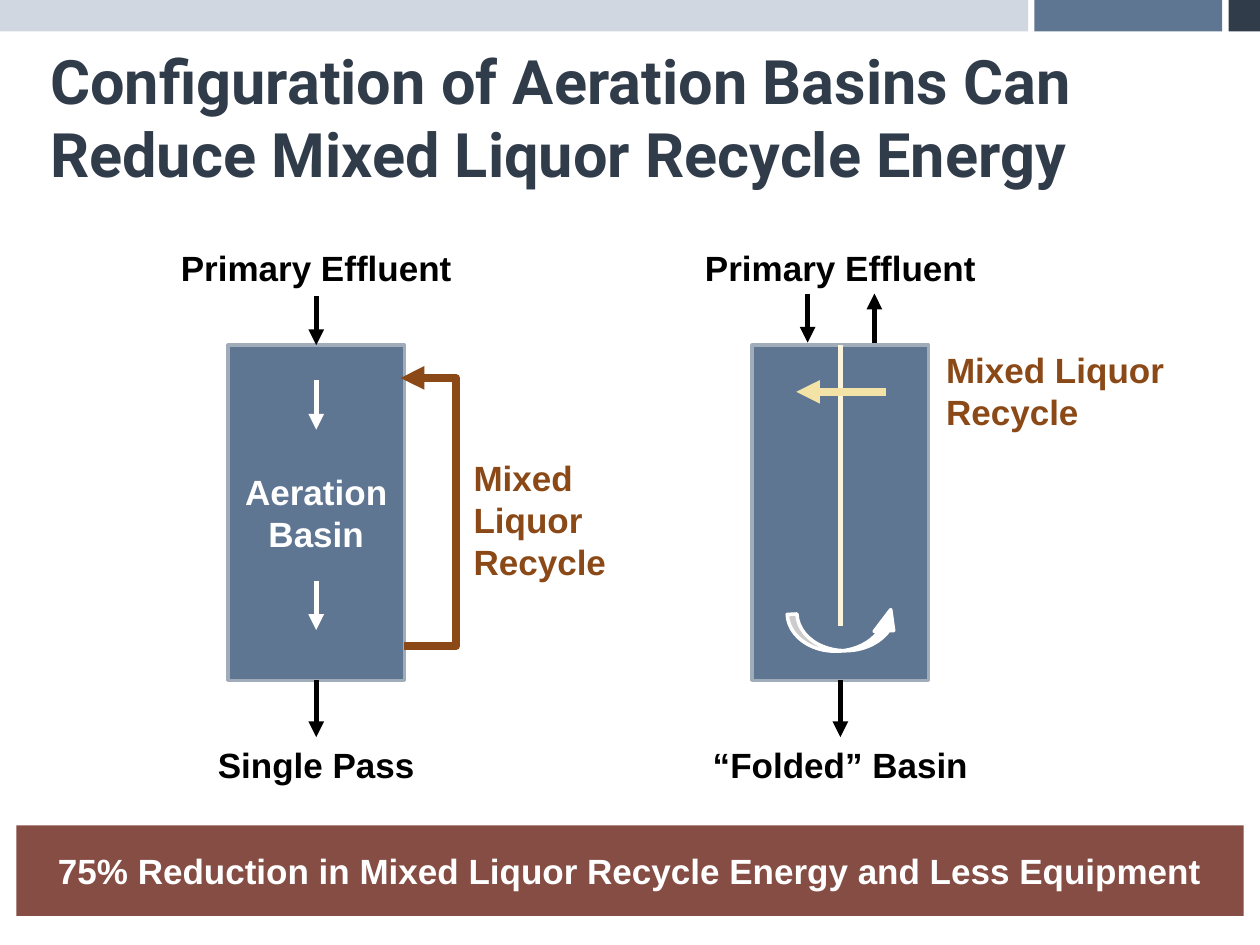
from lxml import etree
from pptx import Presentation
from pptx.dml.color import RGBColor
from pptx.enum.shapes import MSO_CONNECTOR, MSO_SHAPE
from pptx.enum.text import MSO_ANCHOR, MSO_AUTO_SIZE, PP_ALIGN
from pptx.oxml.ns import qn
from pptx.util import Inches, Pt

RECT = MSO_SHAPE.RECTANGLE
CURVE = MSO_SHAPE.CURVED_RIGHT_ARROW
LINE = MSO_CONNECTOR.STRAIGHT
LEFT, CENTER = PP_ALIGN.LEFT, PP_ALIGN.CENTER
TOP, MIDDLE = MSO_ANCHOR.TOP, MSO_ANCHOR.MIDDLE
GROW = MSO_AUTO_SIZE.SHAPE_TO_FIT_TEXT
BLACK, WHITE = "000000", "FFFFFF"
BLUE, NAVY, PALE, EDGE = "5F7693", "313C4A", "D0D7E0", "A0ACBA"
BROWN, BRICK, CREAM, GOLD = "8A4917", "864D44", "FAF4DB", "F3E3A6"


def color(code):
    return RGBColor.from_string(code)


class Board:
    """Draws styled elements on the current slide."""

    def __init__(self, slide, font="Arial", size=20):
        self.slide, self.font, self.size = slide, font, size

    def text(self, shape, words, ink, align=CENTER, anchor=MIDDLE, font=None, size=None):
        frame = shape.text_frame
        frame.word_wrap = True
        frame.vertical_anchor = anchor
        para = frame.paragraphs[0]
        para.alignment = align
        run = para.add_run()
        run.text = words
        run.font.name = font or self.font
        run.font.size = Pt(size or self.size)
        run.font.bold = True
        run.font.color.rgb = color(ink)

    def stroke(self, line, ink, width):
        line.color.rgb = color(ink)
        line.width = Pt(width)

    def arrow(self, shape):
        edge = shape._element.spPr.find(qn("a:ln"))
        etree.SubElement(edge, qn("a:tailEnd"), type="triangle")

    def label(self, box, words, ink=BLACK, align=CENTER):
        shape = self.slide.shapes.add_textbox(*map(Inches, box))
        self.text(shape, words, ink, align, TOP)
        shape.text_frame.auto_size = GROW

    def title(self, box, words):
        shape = self.slide.shapes.add_textbox(*map(Inches, box))
        self.text(shape, words, NAVY, LEFT, font="Roboto", size=35)

    def shape(self, box, fill, edge=None, kind=RECT):
        shape = self.slide.shapes.add_shape(kind, *map(Inches, box))
        shape.shadow.inherit = False
        shape.fill.solid()
        shape.fill.fore_color.rgb = color(fill)
        if edge:
            self.stroke(shape.line, edge, 2)
        else:
            shape.line.fill.background()
        return shape

    def line(self, start, end, ink=BLACK, width=3, arrow=True, first=None, last=None):
        link = self.slide.shapes.add_connector(LINE, *map(Inches, start + end))
        if first:
            link.begin_connect(*first)
        if last:
            link.end_connect(*last)
        self.stroke(link.line, ink, width)
        if arrow:
            self.arrow(link)
        etree.SubElement(link._element.spPr, qn("a:effectLst"))

    def route(self, points, ink, width):
        points = [(Inches(x), Inches(y)) for x, y in points]
        maker = self.slide.shapes.build_freeform(*points[0], scale=1.0)
        maker.add_line_segments(points[1:], close=False)
        shape = maker.convert_to_shape()
        shape.shadow.inherit = False
        shape.fill.background()
        self.stroke(shape.line, ink, width)
        self.arrow(shape)

    def basin(self, mid, name):
        self.label((mid - 1.47, 1.91, 2.94, 0.44), "Primary Effluent")
        self.label((mid - 1.47, 5.85, 2.94, 0.44), name)
        tank = self.shape((mid - 0.7, 2.74, 1.4, 2.66), BLUE, EDGE)
        self.line((mid, 5.4), (mid, 5.85), first=(tank, 2))
        return tank


def main():
    deck = Presentation()
    deck.slide_width, deck.slide_height = Inches(10), Inches(7.5)
    board = Board(deck.slides.add_slide(deck.slide_layouts[6]))

    for left, width, fill in ((0, 8.16, PALE), (8.21, 1.49, BLUE), (9.75, 0.25, NAVY)):
        board.shape((left, 0, width, 0.25), fill)
    board.title((0.3, 0.3, 9.39, 1.25),
                "Configuration of Aeration Basins Can Reduce Mixed Liquor Recycle Energy")
    banner = board.shape((0.13, 6.55, 9.74, 0.72), BRICK)
    board.text(banner, "75% Reduction in Mixed Liquor Recycle Energy and Less Equipment", WHITE)

    mid = 2.51
    tank = board.basin(mid, "Single Pass")
    board.text(tank, "Aeration Basin", WHITE)
    board.line((mid, 2.35), (mid, 2.74), last=(tank, 0))
    for top in (3.02, 4.61):
        board.line((mid, top), (mid, top + 0.39), WHITE)
    board.label((3.66, 3.57, 1.51, 1.11), "Mixed Liquor Recycle", BROWN, LEFT)
    board.route([(3.21, 5.13), (3.62, 5.13), (3.62, 3), (3.18, 3)], BROWN, 4.5)

    mid = 6.67
    tank = board.basin(mid, "“Folded” Basin")
    board.line((mid, 2.74), (mid, 4.97), CREAM, arrow=False, first=(tank, 0))
    board.label((7.41, 2.72, 2.15, 0.77), "Mixed Liquor Recycle", BROWN, LEFT)
    board.line((6.41, 2.33), (6.41, 2.72))
    board.line((6.94, 2.72), (6.94, 2.33))
    turn = board.shape((6.55, 4.56, 0.31, 0.9), WHITE, WHITE, CURVE)
    turn.rotation = 267.3
    turn.adjustments[2] = 0.54
    board.line((7.03, 3.11), (6.32, 3.11), GOLD, 4.5)

    deck.save("out.pptx")


if __name__ == "__main__":
    main()
